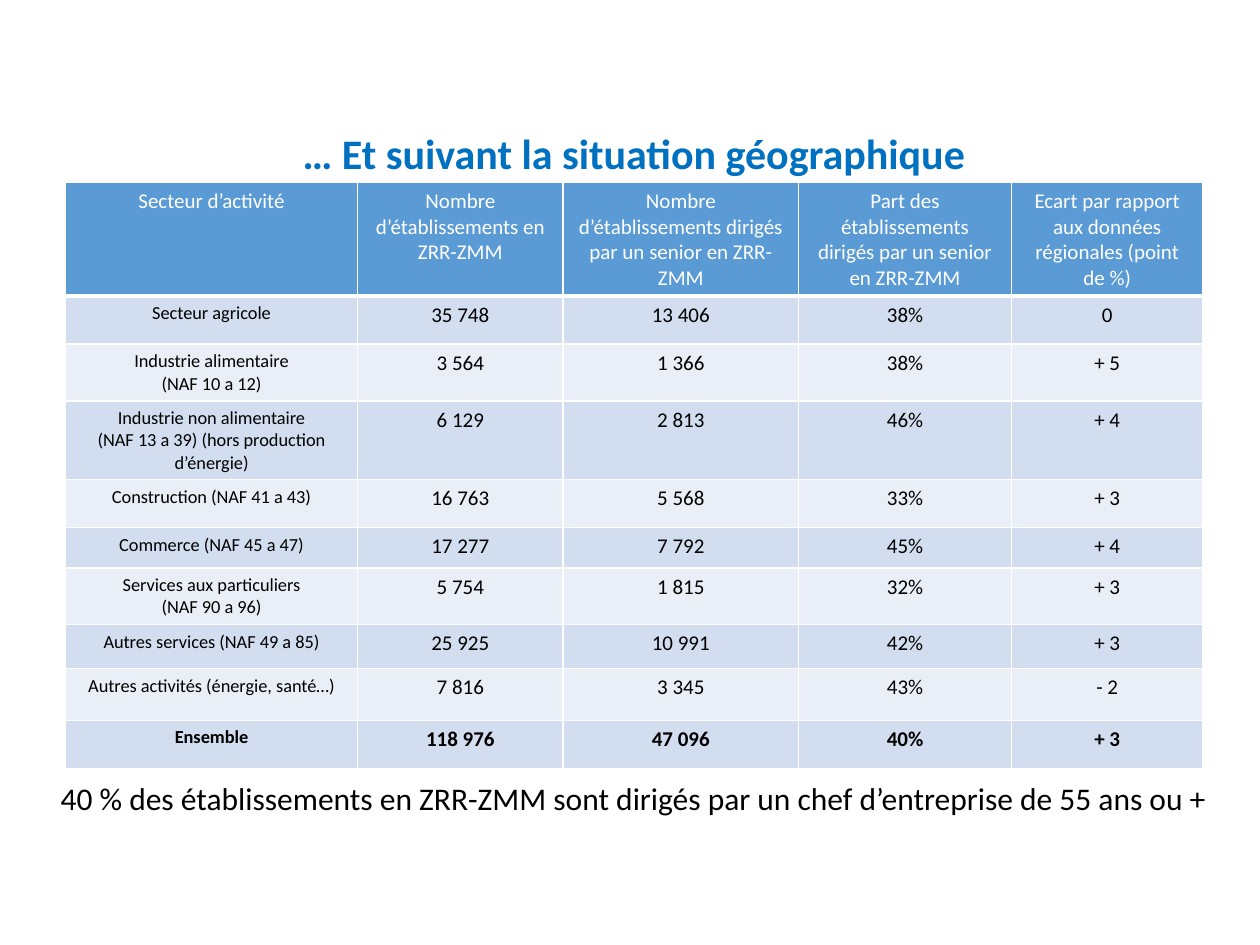
from lxml import etree
from pptx import Presentation
from pptx.dml.color import RGBColor
from pptx.enum.text import MSO_ANCHOR, PP_ALIGN
from pptx.oxml.ns import qn
from pptx.util import Cm, Pt

CENTER = PP_ALIGN.CENTER
TOP, MIDDLE = MSO_ANCHOR.TOP, MSO_ANCHOR.MIDDLE

FONT = "Calibri"
WHITE = RGBColor(0xFF, 0xFF, 0xFF)
BLACK = RGBColor(0x00, 0x00, 0x00)
TITLE_BLUE = RGBColor(0x00, 0x70, 0xC0)
HEADER_BLUE = RGBColor(0x5B, 0x9B, 0xD5)
BAND_DARK = RGBColor(0xD2, 0xDE, 0xEF)
BAND_LIGHT = RGBColor(0xEA, 0xEF, 0xF7)

COLUMN_WIDTHS = (5.89, 4.14, 4.75, 4.29, 3.86)
ROW_HEIGHTS = (2.06, 0.97, 1.04, 1.42, 0.97, 0.81, 1.04, 0.89, 1.04, 0.97)
SECTORS = (
    ("Secteur d’activité", "Nombre d’établissements en\nZRR-ZMM",
     "Nombre d’établissements dirigés par un senior en ZRR-ZMM",
     "Part des établissements dirigés par un senior en ZRR-ZMM",
     "Ecart par rapport aux données régionales (point de %)"),
    ("Secteur agricole", "35 748", "13 406", "38%", "0"),
    ("Industrie alimentaire\n(NAF 10 a 12)", "3 564", "1 366", "38%", "+ 5"),
    ("Industrie non alimentaire\n(NAF 13 a 39) (hors production d’énergie)",
     "6 129", "2 813", "46%", "+ 4"),
    ("Construction (NAF 41 a 43)", "16 763", "5 568", "33%", "+ 3"),
    ("Commerce (NAF 45 a 47)", "17 277", "7 792", "45%", "+ 4"),
    ("Services aux particuliers\n(NAF 90 a 96)", "5 754", "1 815", "32%", "+ 3"),
    ("Autres services (NAF 49 a 85)", "25 925", "10 991", "42%", "+ 3"),
    ("Autres activités (énergie, santé…)", "7 816", "3 345", "43%", "- 2"),
    ("Ensemble", "118 976", "47 096", "40%", "+ 3"),
)


def write_centered(frame, text, size, color, bold=False):
    frame.text = text
    for paragraph in frame.paragraphs:
        paragraph.alignment = CENTER
        for run in paragraph.runs:
            run.font.name = FONT
            run.font.size = Pt(size)
            run.font.bold = bold
            run.font.color.rgb = color


def add_caption(slide, box, text, size, color, bold=False, anchor=TOP):
    caption = slide.shapes.add_textbox(*(Cm(length) for length in box))
    frame = caption.text_frame
    frame.word_wrap = True
    frame.vertical_anchor = anchor
    write_centered(frame, text, size, color, bold)
    return frame


def add_title(slide, box):
    frame = add_caption(slide, box, "… Et suivant la situation géographique",
                        24, TITLE_BLUE, bold=True, anchor=MIDDLE)
    frame.paragraphs[0].line_spacing = 0.9


def add_borders(cell, top=1, bottom=1):
    """Draw white cell borders; call before the fill, which must follow them."""
    properties = cell._tc.get_or_add_tcPr()
    for side, width in (("L", 1), ("R", 1), ("T", top), ("B", bottom)):
        line = etree.SubElement(properties, qn(f"a:ln{side}"), w=str(Pt(width)))
        fill = etree.SubElement(line, qn("a:solidFill"))
        etree.SubElement(fill, qn("a:srgbClr"), val=str(WHITE))


def add_sector_table(slide, box):
    table = slide.shapes.add_table(len(SECTORS), len(COLUMN_WIDTHS),
                                   *(Cm(length) for length in box)).table
    for column, width in zip(table.columns, COLUMN_WIDTHS):
        column.width = Cm(width)
    last = len(SECTORS) - 1
    for r, (sector, height) in enumerate(zip(SECTORS, ROW_HEIGHTS)):
        table.rows[r].height = Cm(height)
        is_header = r == 0
        band = BAND_DARK if r % 2 else BAND_LIGHT
        for c, text in enumerate(sector):
            cell = table.cell(r, c)
            add_borders(cell, top=3 if r == 1 else 1, bottom=3 if is_header else 1)
            cell.fill.solid()
            cell.fill.fore_color.rgb = HEADER_BLUE if is_header else band
            size = 10.5 if c == 0 and not is_header else 12
            write_centered(cell.text_frame, text, size,
                           WHITE if is_header else BLACK, bold=r == last)


def main():
    presentation = Presentation()
    presentation.slide_width, presentation.slide_height = Cm(25.4), Cm(19.05)
    slide = presentation.slides.add_slide(presentation.slide_layouts[6])
    add_title(slide, (1.83, 2.03, 21.9, 2.24))
    add_sector_table(slide, (1.32, 3.68, 22.93, 11.79))
    add_caption(slide, (0.81, 15.57, 23.93, 1.02),
                "40 % des établissements en ZRR-ZMM sont dirigés par "
                "un chef d’entreprise de 55 ans ou +", 18, BLACK)
    presentation.save("out.pptx")


if __name__ == "__main__":
    main()
